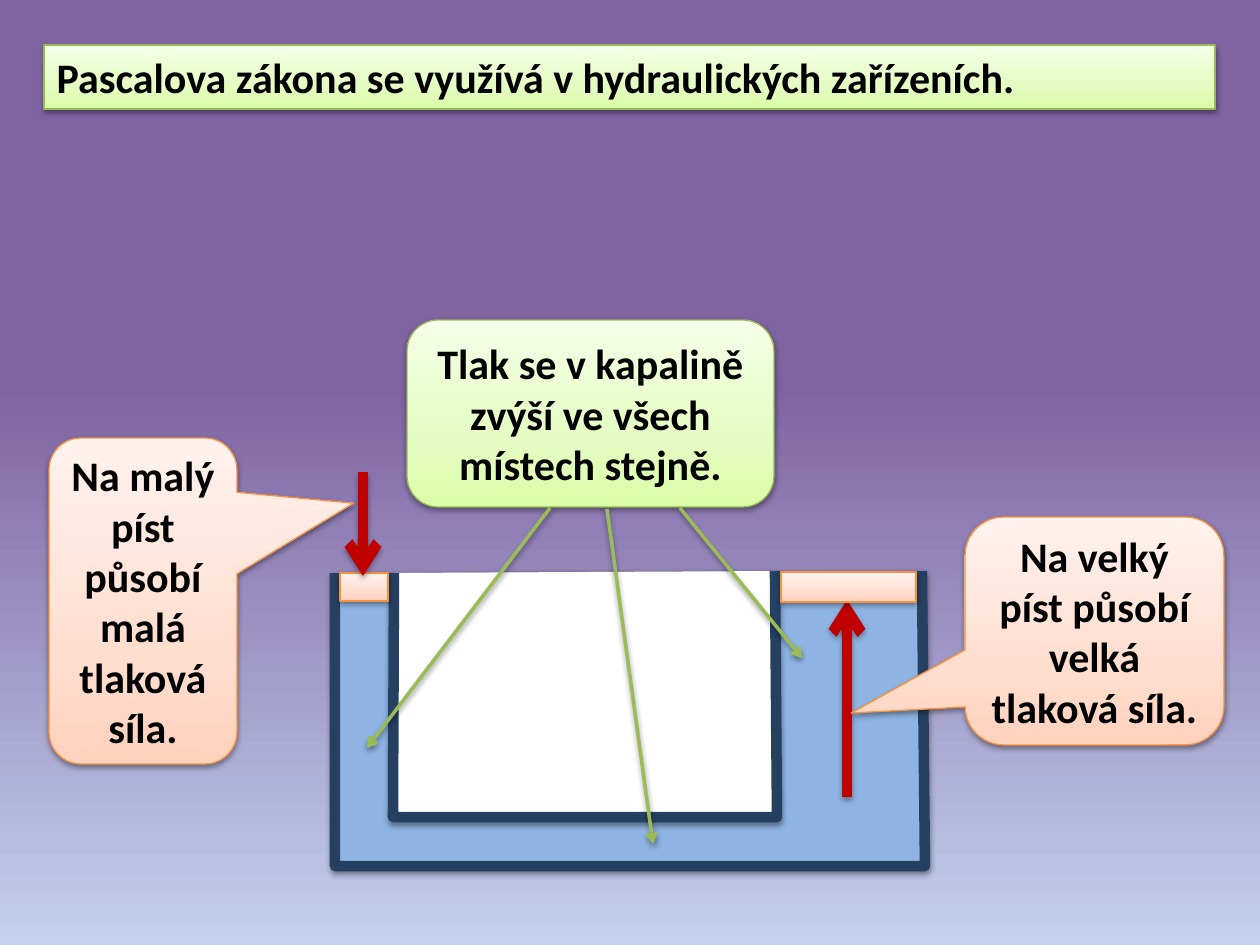
from lxml import etree
from pptx import Presentation
from pptx.dml.color import RGBColor
from pptx.enum.shapes import MSO_CONNECTOR, MSO_SHAPE
from pptx.enum.text import MSO_ANCHOR, MSO_AUTO_SIZE, PP_ALIGN
from pptx.oxml.ns import qn
from pptx.util import Emu, Pt

RECT = MSO_SHAPE.RECTANGLE
ROUNDED = MSO_SHAPE.ROUNDED_RECTANGLE
CALLOUT = MSO_SHAPE.ROUNDED_RECTANGULAR_CALLOUT
STRAIGHT = MSO_CONNECTOR.STRAIGHT
LEFT, CENTER = PP_ALIGN.LEFT, PP_ALIGN.CENTER
MIDDLE = MSO_ANCHOR.MIDDLE
NO_AUTOFIT = MSO_AUTO_SIZE.NONE

SCALE = 914400 / 126  # EMU in one px

# Each style: gradient stops from the bottom up, and line colour
GREEN = ([(0, "DAFDA7"), (35, "E4FCC2"), (100, "F5FFE7")], "98B955")
ORANGE = ([(0, "FFD2BD"), (35, "FFDED0"), (100, "FFF2ED")], "F69240")
BACKGROUND = [(41, "8064A2"), (100, "C2D1ED")]
WALL, LIQUID, WHITE = "254061", "8EB4E3", "FFFFFF"
FORCE, POINTER = "C00000", "9BBB59"


def px(n):
    return Emu(round(n * SCALE))


def rgb(color):
    return RGBColor.from_string(color)


def set_gradient(fill, owner, stops, angle):
    fill.gradient()
    fill.gradient_angle = angle
    gs_list = next(owner.iter(qn("a:gsLst")))
    for gs in list(gs_list):
        gs_list.remove(gs)
    for pos, color in stops:
        gs = etree.SubElement(gs_list, qn("a:gs"), pos=str(pos * 1000))
        etree.SubElement(gs, qn("a:srgbClr"), val=color)


def set_line(line, color, width):
    line.color.rgb = rgb(color)
    line.width = Pt(width)


def add_shadow(sp_pr, alpha=38, dist=20000):
    effects = sp_pr.find(qn("a:effectLst"))
    if effects is None:
        effects = etree.SubElement(sp_pr, qn("a:effectLst"))
    shadow = etree.SubElement(effects, qn("a:outerShdw"), blurRad="40000",
                              dist=str(dist), dir="5400000", rotWithShape="0")
    color = etree.SubElement(shadow, qn("a:srgbClr"), val="000000")
    etree.SubElement(color, qn("a:alpha"), val=str(alpha * 1000))


def style_box(sp, style):
    stops, outline = style
    set_gradient(sp.fill, sp._element.spPr, stops, 90)
    set_line(sp.line, outline, 0.75)
    sp.shadow.inherit = False
    add_shadow(sp._element.spPr)


def set_text(sp, text, align):
    tf = sp.text_frame
    tf.word_wrap = True
    tf.auto_size = NO_AUTOFIT
    tf.vertical_anchor = MIDDLE
    p = tf.paragraphs[0]
    p.alignment = align
    r = p.add_run()
    r.text = text
    r.font.name = "Calibri"
    r.font.size = Pt(24)
    r.font.bold = True
    r.font.color.rgb = rgb("000000")


def add_title(s, text, box):
    sp = s.shapes.title
    sp.left, sp.top, sp.width, sp.height = map(px, box)
    style_box(sp, GREEN)
    set_text(sp, text, LEFT)


def add_box(s, kind, box, style, text=None, adjustments=()):
    sp = s.shapes.add_shape(kind, *map(px, box))
    for i, value in enumerate(adjustments):
        sp.adjustments[i] = value
    style_box(sp, style)
    if text:
        set_text(sp, text, CENTER)


def add_vessel(s, points, fill):
    builder = s.shapes.build_freeform(*points[0], scale=SCALE)
    builder.add_line_segments(points[1:], close=False)
    sp = builder.convert_to_shape()
    sp.fill.solid()
    sp.fill.fore_color.rgb = rgb(fill)
    set_line(sp.line, WALL, 6)
    sp.shadow.inherit = False
    add_shadow(sp._element.spPr)


def add_arrow(s, start, end, color, width, **shadow):
    line = s.shapes.add_connector(STRAIGHT, *map(px, start + end))
    set_line(line.line, color, width)
    sp_pr = line._element.spPr
    etree.SubElement(sp_pr.find(qn("a:ln")), qn("a:tailEnd"), type="arrow")
    add_shadow(sp_pr, **shadow)


def main():
    prs = Presentation()
    prs.slide_width, prs.slide_height = px(1260), px(945)
    s = prs.slides.add_slide(prs.slide_layouts[5])
    set_gradient(s.background.fill, s._element, BACKGROUND, 270)

    add_title(s, "Pascalova zákona se využívá v hydraulických zařízeních.",
              (44, 45, 1171, 64))

    # Vessel: outer wall with liquid, then the empty middle
    add_vessel(s, [(922, 571), (925, 866), (335, 866), (335, 573)], LIQUID)
    add_vessel(s, [(775, 571), (777, 817), (393, 817), (394, 573)], WHITE)

    # Pistons and the forces on them
    add_box(s, RECT, (340, 573, 48, 28), ORANGE)
    for start, end in [((847, 797), (847, 600)), ((363, 472), (363, 576))]:
        add_arrow(s, start, end, FORCE, 6, alpha=35, dist=23000)
    add_box(s, RECT, (781, 572, 135, 30), ORANGE)

    # Explanations
    add_box(s, CALLOUT, (49, 438, 188, 326), ORANGE,
            "Na malý píst působí malá tlaková síla.", (1.12, -0.3, 0.17))
    add_box(s, ROUNDED, (407, 320, 367, 187), GREEN,
            "Tlak se v kapalině zvýší ve všech místech stejně.")
    for start, end in [((550, 508), (367, 748)), ((607, 509), (653, 844)),
                       ((680, 508), (802, 658))]:
        add_arrow(s, start, end, POINTER, 2)
    add_box(s, CALLOUT, (965, 517, 259, 228), ORANGE,
            "Na velký píst působí velká tlaková síla.", (-0.94, 0.36, 0.17))

    prs.save("out.pptx")


if __name__ == "__main__":
    main()
